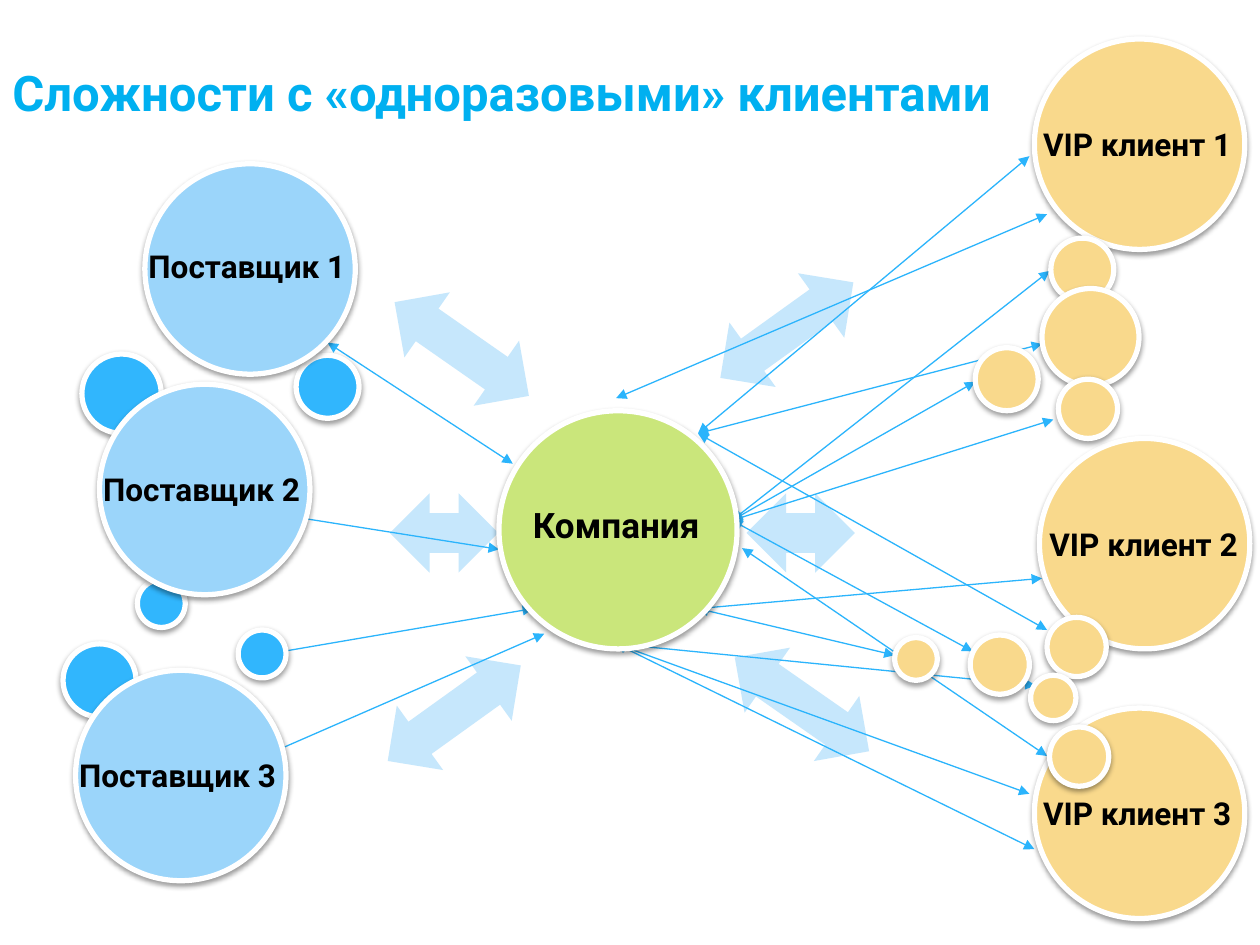
from dataclasses import dataclass

from lxml import etree
from pptx import Presentation
from pptx.dml.color import RGBColor
from pptx.enum.shapes import MSO_CONNECTOR, MSO_SHAPE
from pptx.enum.text import MSO_ANCHOR, MSO_AUTO_SIZE
from pptx.oxml.ns import qn
from pptx.util import Inches, Pt

ELLIPSE = MSO_SHAPE.OVAL
DOUBLE_ARROW = MSO_SHAPE.UP_DOWN_ARROW
STRAIGHT = MSO_CONNECTOR.STRAIGHT
MIDDLE = MSO_ANCHOR.MIDDLE
FIT_SHAPE = MSO_AUTO_SIZE.SHAPE_TO_FIT_TEXT

FONT = "Roboto"
COLORS = {
    "title": "00B0F0",
    "text": "000000",
    "link": "2BB4FC",
    "arrow": "C6E7FC",
    "supplier": "9BD5FA",
    "minor": "31B6FD",
    "company": "CAE67B",
    "client": "F9D98C",
    "outline": "FFFFFF",
    "shadow": "000000",
}

# Grid of 100 columns by 75 rows; all positions below are in cells
COLUMNS, ROWS = 100, 75
CELL = Inches(10) // COLUMNS
BIG, HUB = 16.7, 18.9


@dataclass
class BlockArrow:
    x: float  # centre
    y: float
    length: float
    angle: float


@dataclass
class Links:
    start: tuple[float, float]
    ends: list[tuple[float, float]]


@dataclass
class Circle:
    x: float  # centre
    y: float
    size: float
    color: str
    label: str = ""
    label_width: float = 0
    label_height: float = 4
    dx: float = 0  # label offset from the centre
    dy: float = 0
    font_size: int = 18
    wrap: bool = False


BLOCK_ARROWS = [
    BlockArrow(63.65, 55.9, 13, 304.9),
    BlockArrow(35.25, 42.3, 8.6, 270),
    BlockArrow(36.05, 56.6, 13, 234.3),
    BlockArrow(63.55, 42.3, 8.6, 270),
    BlockArrow(62.45, 26.2, 13, 234.3),
    BlockArrow(36.65, 27.7, 13, 304.9),
]

LINKS = [
    # Company to clients
    Links((55.4, 34.4), [(82.7, 27.3), (83.1, 50), (81.7, 12.4)]),
    Links((58.1, 41.3), [(77.2, 51.7), (77.4, 30.3), (83.3, 21.5), (83.6, 33.3)]),
    Links((55.4, 48.3), [(82.7, 45.9), (71, 52)]),
    Links((58.9, 43.5), [(83.1, 60)]),
    Links((48.9, 31.6), [(83.1, 17)]),
    Links((48.9, 51.1), [(82.1, 67.4), (82.2, 54.4), (81.7, 63)]),
    # Company to suppliers
    Links((40.7, 36.8), [(26, 27.2)]),
    Links((39.6, 43.6), [(23.2, 41)]),
    Links((43.2, 50.3), [(21.4, 59.8)]),
    Links((42.3, 48.3), [(20.7, 52)]),
]

CIRCLES = [
    # Suppliers
    Circle(9.65, 31.25, 6.3, "minor"),
    Circle(7.9, 54, 5.8, "minor"),
    Circle(20.8, 51.9, 3.8, "minor"),
    Circle(12.8, 47.9, 3.8, "minor"),
    Circle(26, 30.7, 5, "minor"),
    Circle(19.85, 21.35, BIG, "supplier", "Поставщик 1", 18.1, dy=-0.25),
    Circle(16.25, 38.85, BIG, "supplier", "Поставщик 2", 18.1),
    Circle(14.35, 61.55, BIG, "supplier", "Поставщик 3", 18.1),
    # Company
    Circle(49.05, 42.05, HUB, "company", "Компания", 16.1, 4.4,
           dx=0.3, dy=-0.35, font_size=20, wrap=True),
    # Key clients
    Circle(90.45, 11.45, BIG, "client", "VIP клиент 1", 17.5, dx=0.1),
    Circle(90.85, 43.15, BIG, "client", "VIP клиент 2", 17.5, dx=0.2),
    Circle(90.45, 64.55, BIG, "client", "VIP клиент 3", 17.5, dx=0.1),
    # One-time clients
    Circle(85.9, 21.4, 5, "client"),
    Circle(86.55, 26.75, 7.7, "client"),
    Circle(79.9, 30.1, 5, "client"),
    Circle(86.35, 32.45, 4.7, "client"),
    Circle(85.45, 51.35, 4.7, "client"),
    Circle(79.35, 52.75, 4.7, "client"),
    Circle(83.6, 55.4, 3.6, "client"),
    Circle(85.65, 60.05, 4.7, "client"),
    Circle(72.7, 52.3, 3.4, "client"),
]


def cells(count: float) -> int:
    return round(count * CELL)


def rgb(name: str) -> RGBColor:
    return RGBColor.from_string(COLORS[name])


def centred_box(x: float, y: float, width: float, height: float) -> list[int]:
    return [cells(v) for v in (x - width / 2, y - height / 2, width, height)]


def add_run(p, text: str, size: int, color: str) -> None:
    r = p.add_run()
    r.text = text
    r.font.name, r.font.size, r.font.bold = FONT, Pt(size), True
    r.font.color.rgb = rgb(color)


def draw_block_arrow(s, arrow: BlockArrow) -> None:
    sp = s.shapes.add_shape(
        DOUBLE_ARROW, *centred_box(arrow.x, arrow.y, 6.3, arrow.length))
    sp.rotation = arrow.angle
    sp.shadow.inherit = False
    sp.fill.solid()
    sp.fill.fore_color.rgb = rgb("arrow")
    sp.line.fill.background()


def draw_links(s, links: Links) -> None:
    for end in links.ends:
        line = s.shapes.add_connector(
            STRAIGHT, *[cells(v) for v in links.start + end])
        line.line.color.rgb = rgb("link")
        line.line.width = Pt(0.75)
        ln = line.line._get_or_add_ln()
        for tag in ("a:headEnd", "a:tailEnd"):
            etree.SubElement(ln, qn(tag), type="triangle")
        etree.SubElement(line._element.spPr, qn("a:effectLst"))


def add_shadow(sp) -> None:
    sp.shadow.inherit = False
    effects = sp._element.spPr.find(qn("a:effectLst"))
    outer = etree.SubElement(
        effects, qn("a:outerShdw"), blurRad=str(Pt(3.1)), dist=str(Pt(1.6)),
        dir="5400000", rotWithShape="0")
    color = etree.SubElement(outer, qn("a:srgbClr"), val=COLORS["shadow"])
    etree.SubElement(color, qn("a:alpha"), val="38000")


def draw_circle(s, circle: Circle) -> None:
    sp = s.shapes.add_shape(
        ELLIPSE, *centred_box(circle.x, circle.y, circle.size, circle.size))
    sp.fill.solid()
    sp.fill.fore_color.rgb = rgb(circle.color)
    sp.line.color.rgb = rgb("outline")
    sp.line.width = Pt(3)
    add_shadow(sp)
    if circle.label:
        tf = s.shapes.add_textbox(*centred_box(
            circle.x + circle.dx, circle.y + circle.dy,
            circle.label_width, circle.label_height)).text_frame
        tf.word_wrap = circle.wrap
        tf.auto_size = FIT_SHAPE
        add_run(tf.paragraphs[0], circle.label, circle.font_size, "text")


def draw_title(s, text: str) -> None:
    tf = s.shapes.add_textbox(0, cells(2.7), cells(96), cells(8.5)).text_frame
    tf.word_wrap = True
    tf.vertical_anchor = MIDDLE
    p = tf.paragraphs[0]
    p.line_spacing = 1.15
    add_run(p, text, 28, "title")


def main() -> None:
    prs = Presentation()
    prs.slide_width, prs.slide_height = cells(COLUMNS), cells(ROWS)
    s = prs.slides.add_slide(prs.slide_layouts[6])
    for arrow in BLOCK_ARROWS:
        draw_block_arrow(s, arrow)
    for links in LINKS:
        draw_links(s, links)
    for circle in CIRCLES:
        draw_circle(s, circle)
    draw_title(s, "Сложности с «одноразовыми» клиентами")
    prs.save("out.pptx")


if __name__ == "__main__":
    main()
